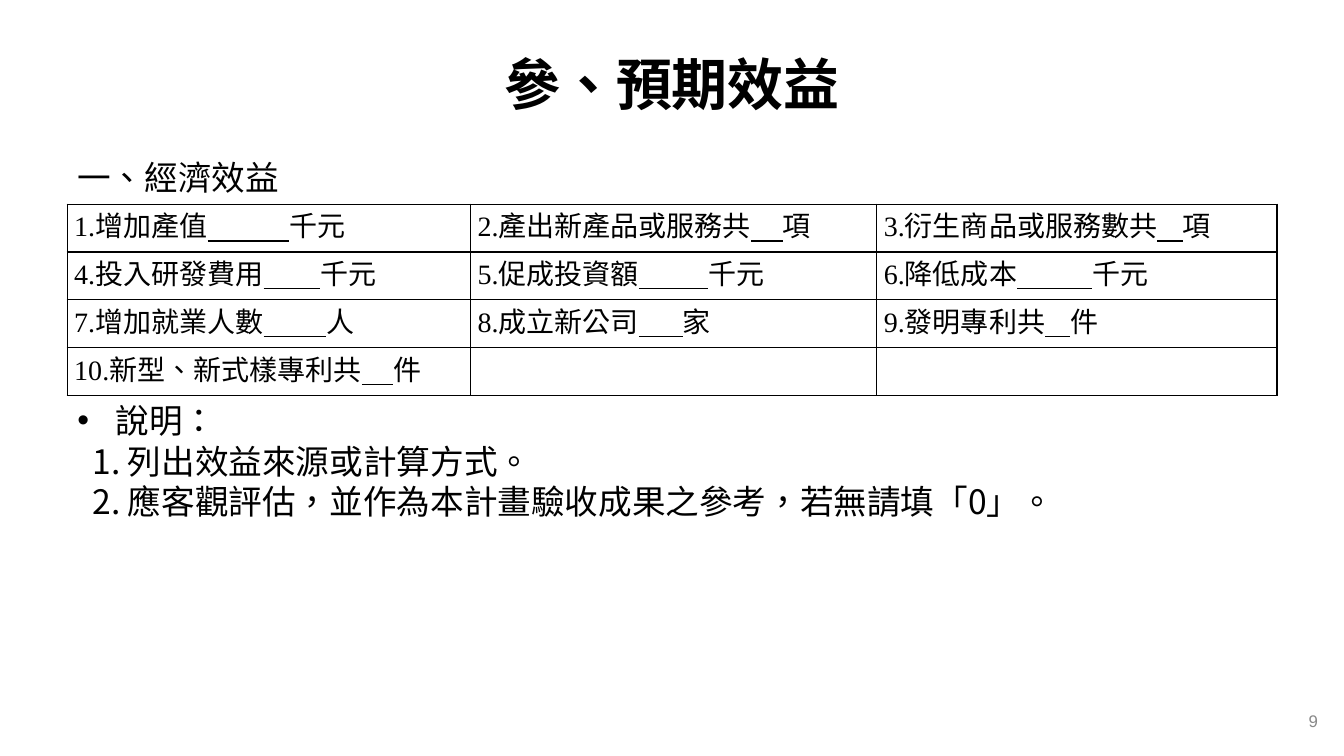
"""Build the expected-benefits slide with its fill-in table."""
import lxml.etree
import pptx
import pptx.dml.color
import pptx.enum.lang
import pptx.enum.text
import pptx.oxml.ns
import pptx.util

BLACK = pptx.dml.color.RGBColor(0x00, 0x00, 0x00)
GRAY = pptx.dml.color.RGBColor(0x89, 0x89, 0x89)
SANS = "Noto Sans CJK SC"
SERIF = "Times New Roman"
ALIGN = pptx.enum.text.PP_ALIGN
MIDDLE = pptx.enum.text.MSO_ANCHOR.MIDDLE
qn = pptx.oxml.ns.qn


def add_span(para, text, size=24, face=SANS, color=BLACK, bold=False, underline=False):
    span = para.add_run()
    span.text = text
    span.font.size = pptx.util.Pt(size)
    span.font.name = face
    span.font.color.rgb = color
    span.font.bold = bold
    span.font.underline = underline
    span.font.language_id = pptx.enum.lang.MSO_LANGUAGE_ID.TRADITIONAL_CHINESE
    east_asian = lxml.etree.SubElement(span.font._element, qn("a:ea"))
    east_asian.set("typeface", SANS)


deck = pptx.Presentation()
deck.slide_width = pptx.util.Inches(13.33)
deck.slide_height = pptx.util.Inches(7.5)
WIDTH, HEIGHT = deck.slide_width, deck.slide_height
LEFT, SPAN = int(WIDTH * 0.05), int(WIDTH * 0.9)
page = deck.slides.add_slide(deck.slide_layouts[1])
title, body = page.placeholders

for box, top, height in ((title, 0.04, 0.14), (body, 0.2, 0.69)):
    box.left, box.top = LEFT, int(HEIGHT * top)
    box.width, box.height = SPAN, int(HEIGHT * height)
    box.text_frame.auto_size = pptx.enum.text.MSO_AUTO_SIZE.NONE

title.text_frame.vertical_anchor = MIDDLE
heading = title.text_frame.paragraphs[0]
heading.alignment = ALIGN.CENTER
add_span(heading, "參、預期效益", size=40, face=SERIF, bold=True)

LINE = 29
TABLE_LINES = 5
body_lines = [
    ("一、經濟效益", 0, 0, 0, False),
    ("說明：", TABLE_LINES * LINE, 0.38, -0.38, True),
    ("1. 列出效益來源或計算方式。", 0, 0.15, 0, False),
    ("2. 應客觀評估，並作為本計畫驗收成果之參考，若無請填「0」。", 0, 0.15, 0, False),
]
for index, (text, before, margin, indent, bulleted) in enumerate(body_lines):
    frame = body.text_frame
    para = frame.add_paragraph() if index else frame.paragraphs[0]
    para.line_spacing = pptx.util.Pt(LINE)
    para.space_before = pptx.util.Pt(before)
    para.space_after = pptx.util.Pt(0)
    properties = para._p.get_or_add_pPr()
    properties.set("marL", str(pptx.util.Inches(margin)))
    properties.set("indent", str(pptx.util.Inches(indent)))
    if bulleted:
        lxml.etree.SubElement(properties, qn("a:buChar")).set("char", "•")
    else:
        lxml.etree.SubElement(properties, qn("a:buNone"))
    add_span(para, text)

number = page.shapes.add_textbox(
    int(WIDTH * 0.755), int(HEIGHT * 0.927), int(WIDTH * 0.233), int(HEIGHT * 0.053))
number.text_frame.word_wrap = True
number.text_frame.vertical_anchor = MIDDLE
number_para = number.text_frame.paragraphs[0]
number_para.alignment = ALIGN.RIGHT
add_span(number_para, "9", size=12, face="Arial", color=GRAY)

benefits = [
    [("1.增加產值", 13, "千元"), ("2.產出新產品或服務共", 5, "項"), ("3.衍生商品或服務數共", 4, "項")],
    [("4.投入研發費用", 9, "千元"), ("5.促成投資額", 11, "千元"), ("6.降低成本", 12, "千元")],
    [("7.增加就業人數", 10, "人"), ("8.成立新公司", 7, "家"), ("9.發明專利共", 4, "件")],
    [("10.新型、新式樣專利共", 5, "件"), None, None],
]
holder = page.shapes.add_table(
    len(benefits), 3, LEFT, int(HEIGHT * 0.27), SPAN, pptx.util.Inches(1.9))
table = holder.table
table.first_row = table.horz_banding = False
for column, width in zip(table.columns, (4, 4.03, 3.97)):
    column.width = pptx.util.Inches(width)

for row, entries in enumerate(benefits):
    for column, entry in enumerate(entries):
        cell = table.cell(row, column)
        cell.margin_left = cell.margin_right = pptx.util.Inches(0.07)
        cell.margin_top = cell.margin_bottom = 0
        properties = cell._tc.get_or_add_tcPr()
        for side in ("a:lnL", "a:lnR", "a:lnT", "a:lnB"):
            border = lxml.etree.SubElement(properties, qn(side))
            border.set("w", str(pptx.util.Pt(1)))
            fill = lxml.etree.SubElement(border, qn("a:solidFill"))
            lxml.etree.SubElement(fill, qn("a:srgbClr")).set("val", str(BLACK))
        cell.fill.background()
        if entry:
            label, blank, unit = entry
            para = cell.text_frame.paragraphs[0]
            para.space_before = para.space_after = pptx.util.Pt(1.8)
            add_span(para, label, size=20, face=SERIF)
            add_span(para, " " * blank, size=20, face=SERIF, underline=True)
            add_span(para, unit, size=20, face=SERIF)

deck.save("out.pptx")
